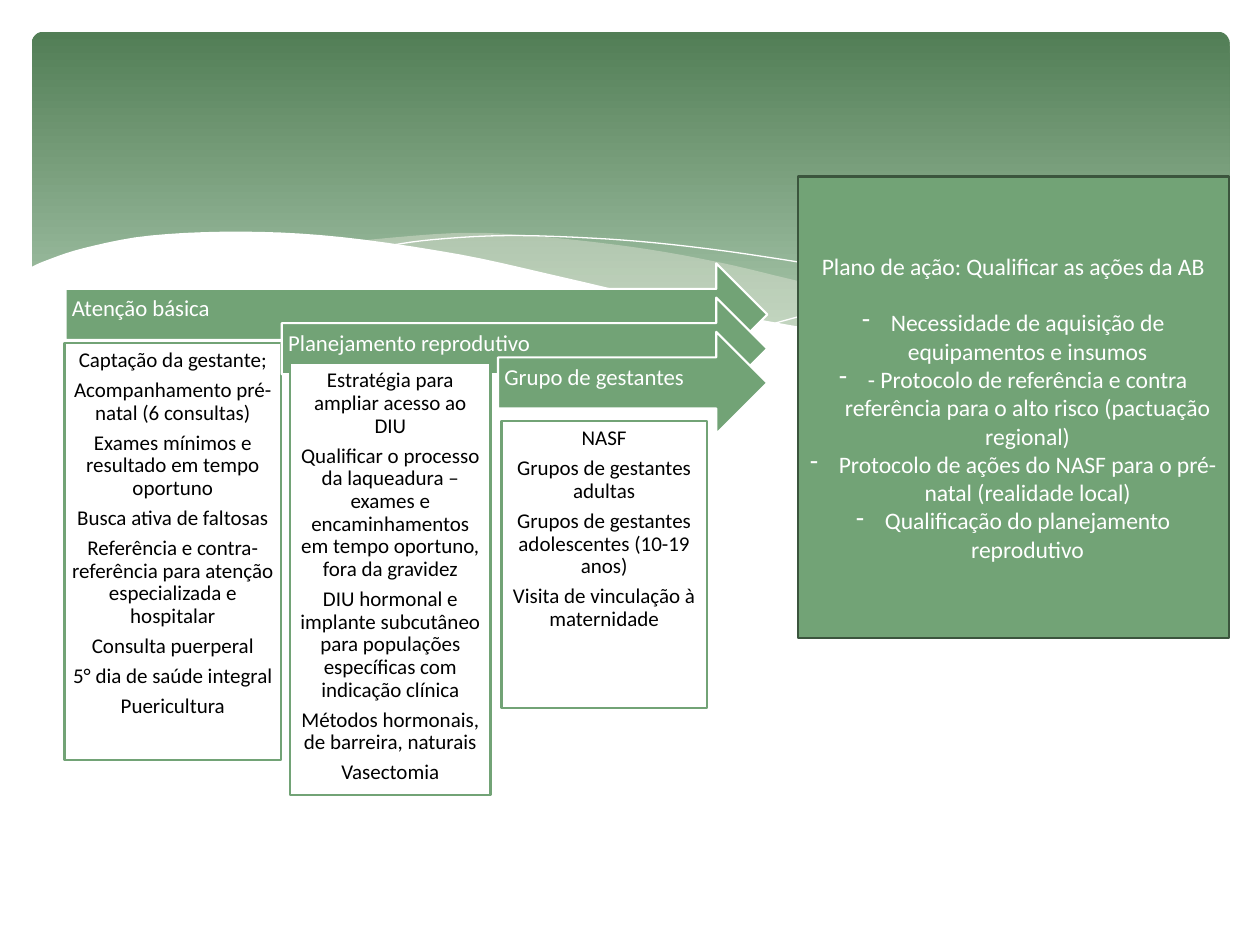
from dataclasses import dataclass

from lxml.etree import SubElement
from pptx import Presentation
from pptx.dml.color import RGBColor
from pptx.enum.shapes import MSO_SHAPE as Shape
from pptx.enum.text import MSO_ANCHOR as Anchor, PP_ALIGN as Align
from pptx.oxml.ns import qn
from pptx.util import Cm, Pt


@dataclass(frozen=True)
class Theme:
    font: str = "Calibri"
    green: str = "72A376"
    dark_green: str = "3B553D"
    banner_top: str = "527E56"
    banner_bottom: str = "AAC8AD"
    veil: str = "EAEBDE"
    white: str = "FFFFFF"
    black: str = "000000"
    heading_size: float = 13
    item_size: float = 12
    plan_size: float = 13.5
    outline: float = 1.25


@dataclass(frozen=True)
class Box:
    """A rectangle in centimetres."""
    left: float
    top: float
    width: float
    height: float

    def inner(self, left, top, width, height):
        return Box(self.left + left, self.top + top, width, height)


@dataclass(frozen=True)
class Step:
    heading: str
    card: tuple  # left, top, width, height within the steps region
    items: tuple


THEME = Theme()

# Edges of the banner's waves, in centimetres from the banner's corner
WHITE_CREST = [(-0.06, 4.77), (0.27, 4.62), (1.06, 4.36), (2.38, 4.11), (4.26, 4.03),
               (6.24, 4.14), (8.63, 4.49), (10.71, 4.95), (12.8, 5.43), (15.26, 5.91),
               (17.34, 6.22), (19.5, 6.37), (21.28, 6.32), (22.73, 6.09), (24.18, 5.61)]
WHITE_BASE = [(24.18, 7.72), (-0.06, 7.72)]
RIGHT_VEIL_TOP = [(24.15, 4.44), (23.11, 4.62), (21.23, 5.02), (18.49, 5.66), (16.15, 6.09)]
RIGHT_VEIL_BASE = [(16.15, 6.09), (17.27, 6.24), (18.59, 6.37), (20.04, 6.42),
                   (21.51, 6.32), (22.75, 6.09), (24.15, 5.63)]
LONG_VEIL_TOP = [(22.04, 6.29), (19.86, 5.96), (17.29, 5.46), (15.34, 5), (13.81, 4.64),
                 (12.11, 4.34), (10.03, 4.11), (8.53, 4.06), (6.62, 4.21)]
LONG_VEIL_BASE = [(6.62, 4.21), (8.55, 4.52), (10.76, 5), (12.82, 5.46), (15.06, 5.91),
                  (17.01, 6.22), (18.69, 6.4), (20.14, 6.42), (22.04, 6.29)]
FALLING_LINE = [(7.21, 4.31), (8.1, 4.19), (9.55, 4.11), (11.27, 4.16), (12.9, 4.29),
                (14.8, 4.54), (17.01, 4.92), (19.55, 5.48), (22.4, 6.27)]
RISING_LINE = [(14.93, 5.89), (17.01, 5.33), (19.07, 4.85), (21.36, 4.41),
               (22.83, 4.19), (24.13, 4.06)]

STEPS = [
    Step("Atenção básica", (0, 1.6, 4.37, 8.41), (
        "Captação da gestante;",
        "Acompanhamento pré-natal (6 consultas)",
        "Exames mínimos e resultado em tempo oportuno",
        "Busca ativa de faltosas",
        "Referência e contra-referência para atenção especializada e hospitalar",
        "Consulta puerperal",
        "5° dia de saúde integral",
        "Puericultura")),
    Step("Planejamento reprodutivo", (4.55, 2.01, 4.04, 8.71), (
        "Estratégia para ampliar acesso ao DIU",
        "Qualificar o processo da laqueadura – exames e encaminhamentos em tempo "
        "oportuno, fora da gravidez",
        "DIU hormonal e implante subcutâneo para populações específicas com "
        "indicação clínica",
        "Métodos hormonais, de barreira, naturais",
        "Vasectomia")),
    Step("Grupo de gestantes", (8.81, 3.18, 4.14, 5.79), (
        "NASF",
        "Grupos de gestantes adultas",
        "Grupos de gestantes adolescentes (10-19 anos)",
        "Visita de vinculação à maternidade")),
]

PLAN_HEADING = "Plano de ação: Qualificar as ações da AB"
PLAN_ITEMS = [
    "Necessidade de aquisição de equipamentos e insumos",
    "- Protocolo de referência e contra referência para o alto risco (pactuação regional)",
    "Protocolo de ações do NASF para o pré-natal (realidade local)",
    "Qualificação do planejamento reprodutivo",
]


def smooth(points, pieces=5):
    """Return a Catmull-Rom curve through the points."""
    padded = [points[0], *points, points[-1]]
    curve = [points[0]]
    for a, b, c, d in zip(padded, padded[1:], padded[2:], padded[3:]):
        for t in (n / pieces for n in range(1, pieces + 1)):
            curve.append(tuple(
                (2 * q + (r - p) * t + (2 * p - 5 * q + 4 * r - s) * t ** 2
                 + (3 * q - p - 3 * r + s) * t ** 3) / 2
                for p, q, r, s in zip(a, b, c, d)))
    return curve


def add_wave(slide, box, points, color, opacity=100, closed=True):
    start, *rest = [(Cm(box.left + x), Cm(box.top + y)) for x, y in points]
    builder = slide.shapes.build_freeform(*start)
    builder.add_line_segments(rest, close=closed)
    wave = builder.convert_to_shape()
    wave.shadow.inherit = False
    if not closed:
        wave.fill.background()
        wave.line.color.rgb = RGBColor.from_string(color)
        wave.line.width = Pt(0)
        return
    wave.line.fill.background()
    wave.fill.solid()
    wave.fill.fore_color.rgb = RGBColor.from_string(color)
    if opacity < 100:
        tint = wave.fill._xPr.find(".//" + qn("a:srgbClr"))
        SubElement(tint, qn("a:alpha"), val=str(opacity * 1000))


def add_block(slide, preset, box, fill, line):
    block = slide.shapes.add_shape(
        preset, Cm(box.left), Cm(box.top), Cm(box.width), Cm(box.height))
    block.shadow.inherit = False
    block.fill.solid()
    block.fill.fore_color.rgb = RGBColor.from_string(fill)
    block.line.color.rgb = RGBColor.from_string(line)
    block.line.width = Pt(THEME.outline)
    block.text_frame.word_wrap = True
    return block


def write(frame, texts, size, color, align, anchor):
    frame.text = "\n".join(texts)
    frame.vertical_anchor = anchor
    for paragraph in frame.paragraphs:
        paragraph.alignment = align
        paragraph.font.name = THEME.font
        paragraph.font.size = Pt(size)
        paragraph.font.color.rgb = RGBColor.from_string(color)


def tighten(frame, size, right=0.13, bottom=0.13):
    """Set narrow margins and close line spacing."""
    frame.margin_left = frame.margin_top = Cm(0.13)
    frame.margin_right, frame.margin_bottom = Cm(right), Cm(bottom)
    for paragraph in frame.paragraphs:
        paragraph.line_spacing = 0.9
        paragraph.space_after = Pt(0.35 * size)


def add_banner(slide, box):
    panel = add_block(slide, Shape.ROUNDED_RECTANGLE, box, THEME.banner_top, THEME.white)
    panel.adjustments[0] = 0.034
    panel.line.fill.background()
    panel.fill.gradient()
    panel.fill.gradient_angle = 270
    shades = ((0, THEME.banner_top), (0.9, THEME.banner_bottom))
    for stop, (position, color) in zip(panel.fill.gradient_stops, shades):
        stop.position = position
        stop.color.rgb = RGBColor.from_string(color)
    add_wave(slide, box, smooth(RIGHT_VEIL_TOP) + smooth(RIGHT_VEIL_BASE), THEME.veil, 29)
    add_wave(slide, box, smooth(LONG_VEIL_TOP) + smooth(LONG_VEIL_BASE), THEME.veil, 40)
    for line in (FALLING_LINE, RISING_LINE):
        add_wave(slide, box, smooth(line), THEME.white, closed=False)
    add_wave(slide, box, smooth(WHITE_CREST) + WHITE_BASE, THEME.white)


def add_steps(slide, box):
    for index, step in enumerate(STEPS):
        left = 0.02 + 4.36 * index
        arrow_box = box.inner(left, 0.69 * index, box.width - left, 2.06)
        arrow = add_block(slide, Shape.RIGHT_ARROW, arrow_box, THEME.green, THEME.white)
        write(arrow.text_frame, [step.heading], THEME.heading_size, THEME.white,
              Align.LEFT, Anchor.MIDDLE)
        tighten(arrow.text_frame, THEME.heading_size, right=0.71, bottom=0.33)
        card = add_block(slide, Shape.RECTANGLE, box.inner(*step.card),
                         THEME.white, THEME.green)
        write(card.text_frame, step.items, THEME.item_size, THEME.black,
              Align.CENTER, Anchor.TOP)
        tighten(card.text_frame, THEME.item_size)


def add_action_plan(slide, box):
    plan = add_block(slide, Shape.RECTANGLE, box, THEME.green, THEME.dark_green)
    frame = plan.text_frame
    frame.text = "\n".join([PLAN_HEADING, *PLAN_ITEMS])
    for item in frame.paragraphs[1:]:
        properties = item._p.get_or_add_pPr()
        properties.set("marL", str(Cm(0.58)))
        properties.set("indent", str(-Cm(0.58)))
        SubElement(properties, qn("a:buChar"), char="-")
    for paragraph in frame.paragraphs:
        paragraph.alignment = Align.CENTER
        paragraph.font.name = THEME.font
        paragraph.font.size = Pt(THEME.plan_size)
        paragraph.font.color.rgb = RGBColor.from_string(THEME.white)
    frame.vertical_anchor = Anchor.MIDDLE
    frame.paragraphs[0].space_after = Pt(1.2 * THEME.plan_size)


def main():
    deck = Presentation()
    deck.slide_width, deck.slide_height = Cm(25.4), Cm(19.05)
    slide = deck.slides.add_slide(deck.slide_layouts[6])
    add_banner(slide, Box(0.64, 0.64, 24.15, 6.86))
    add_steps(slide, Box(1.3, 5.31, 14.17, 10.72))
    add_action_plan(slide, Box(16.08, 3.56, 8.69, 9.3))
    deck.save("out.pptx")


if __name__ == "__main__":
    main()
